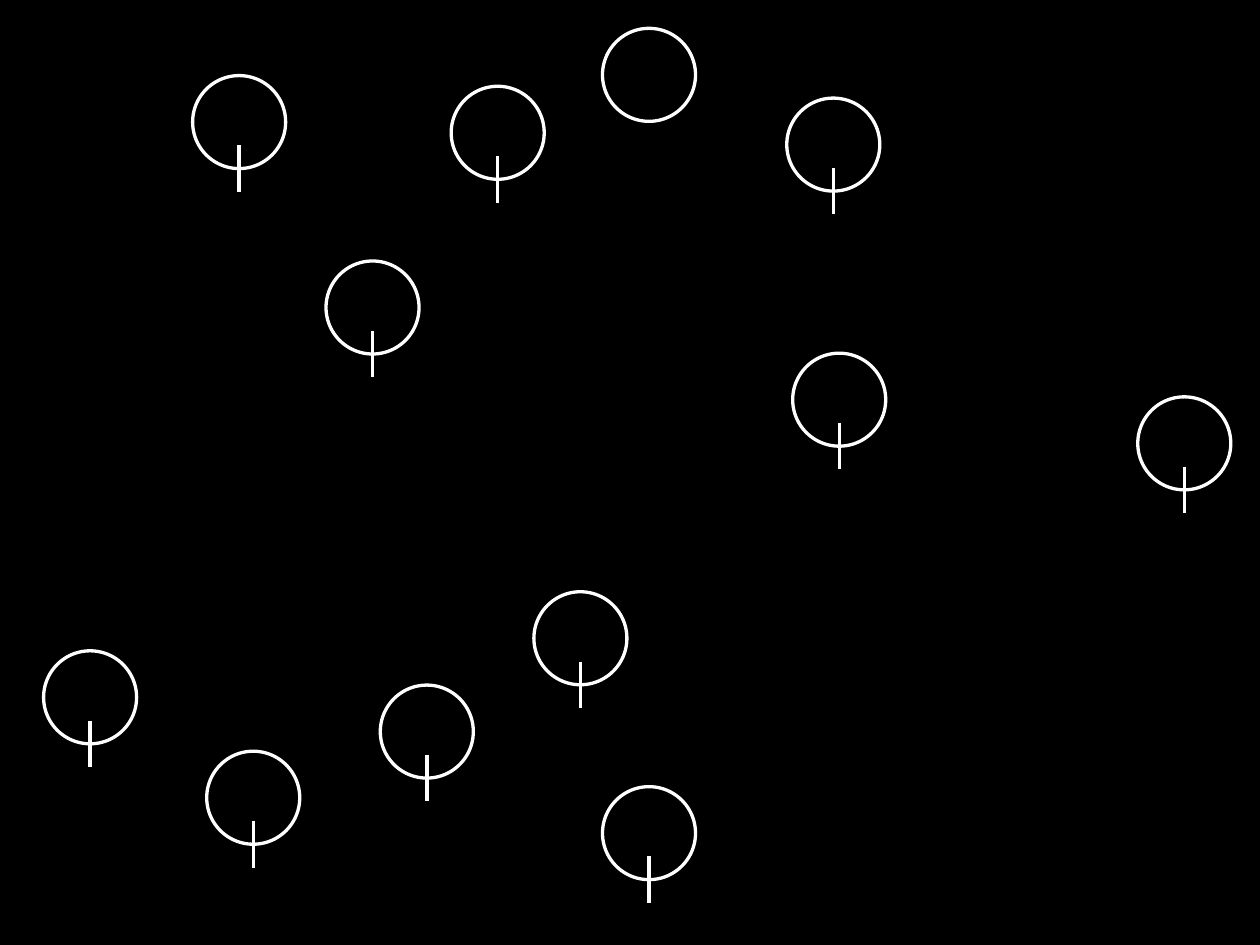
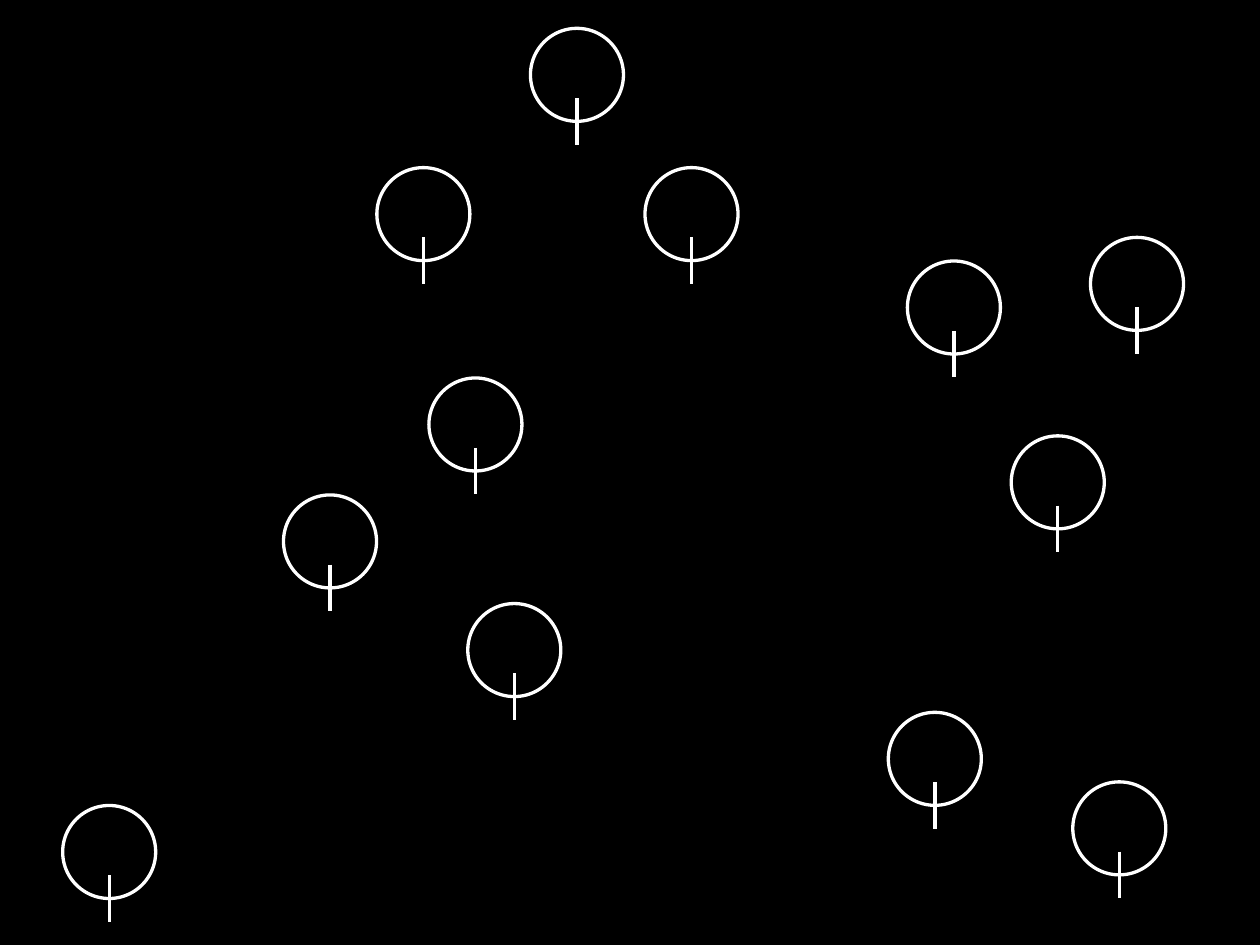
"""Build two black slides of scattered white rings, most with a short stem."""
from dataclasses import dataclass

from lxml.etree import SubElement
from pptx import Presentation
from pptx.dml.color import RGBColor
from pptx.enum.shapes import MSO_CONNECTOR, MSO_SHAPE
from pptx.oxml.ns import qn
from pptx.util import Pt


@dataclass(frozen=True)
class Theme:
    background: RGBColor = RGBColor(0x00, 0x00, 0x00)
    line: RGBColor = RGBColor(0xFF, 0xFF, 0xFF)
    line_width: float = 2
    ring: float = 56.7


THEME = Theme()

PLAIN_RINGS = [[(367.2, 17.3)], []]
STEMMED_RINGS = [
    [(26.6, 396.7), (325.4, 360.7), (693.4, 241.9), (126, 457.9),
     (117.4, 46.1), (483.1, 215.3), (367.2, 479.5), (198.7, 159.1),
     (479.5, 59.8), (231.8, 417.6), (275, 52.6)],
    [(38.2, 491), (261.4, 230.4), (616.3, 265.7), (285.1, 367.9),
     (172.8, 301.7), (664.6, 144.7), (653.8, 476.6), (229.7, 102.2),
     (553, 159.1), (323.3, 17.3), (393.1, 102.2), (541.4, 434.2)],
]


def add_ring(shapes, x, y):
    sp = shapes.add_shape(MSO_SHAPE.OVAL, Pt(x), Pt(y), Pt(THEME.ring), Pt(THEME.ring))
    sp.shadow.inherit = False
    sp.fill.background()
    sp.line.color.rgb = THEME.line
    sp.line.width = Pt(THEME.line_width)


def add_stem(shapes, x, y):
    mid = Pt(x + THEME.ring / 2)
    top, bottom = Pt(y + THEME.ring * 0.75), Pt(y + THEME.ring * 1.25)
    stem = shapes.add_connector(MSO_CONNECTOR.STRAIGHT, mid, top, mid, bottom)
    stem.line.color.rgb = THEME.line
    stem.line.width = Pt(THEME.line_width)
    SubElement(stem._element.spPr, qn("a:effectLst"))


prs = Presentation()
prs.slide_width, prs.slide_height = Pt(767.87), Pt(576)
bg = prs.slide_master.background.fill
bg.solid()
bg.fore_color.rgb = THEME.background

for plain, stemmed in zip(PLAIN_RINGS, STEMMED_RINGS):
    slide = prs.slides.add_slide(prs.slide_layouts[6])
    for x, y in plain:
        add_ring(slide.shapes, x, y)
    for x, y in stemmed:
        group = slide.shapes.add_group_shape()
        add_ring(group.shapes, x, y)
        add_stem(group.shapes, x, y)

prs.save("out.pptx")
